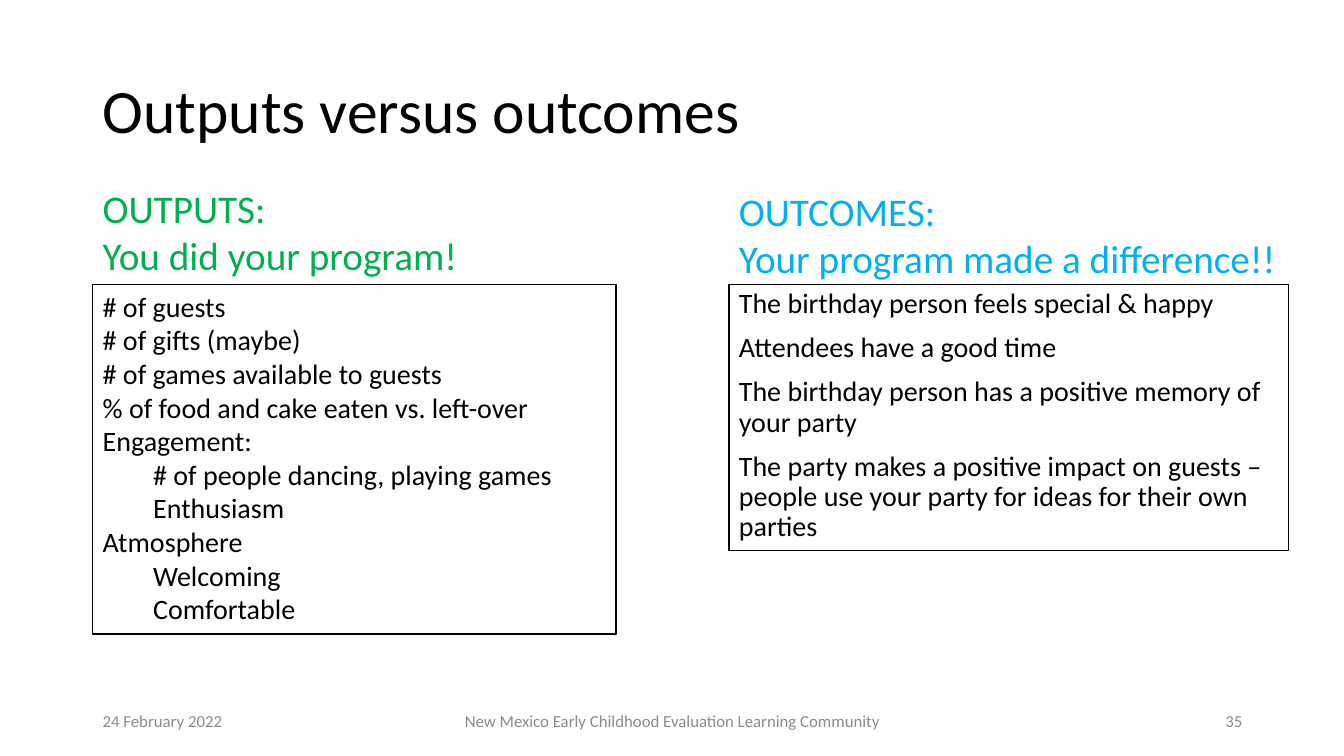
from pptx import Presentation
from pptx.dml.color import RGBColor
from pptx.enum.text import MSO_ANCHOR as Anchor, MSO_AUTO_SIZE as AutoSize, PP_ALIGN as Align
from pptx.util import Inches, Pt

BLACK = RGBColor(0x00, 0x00, 0x00)
WHITE = RGBColor(0xFF, 0xFF, 0xFF)
GREY = RGBColor(0x8C, 0x8C, 0x8C)
GREEN = RGBColor(0x00, 0xB0, 0x50)
BLUE = RGBColor(0x00, 0xB0, 0xF0)

LEFT, RIGHT = 0.92, 7.23
LEFT_WIDTH, RIGHT_WIDTH = 5.19, 5.55
LIST_TOP = 2.82
FOOTER_TOP, FOOTER_HEIGHT = 6.95, 0.4

# Each output is its text and its indent level.
OUTPUTS = [
    ("# of guests", 0),
    ("# of gifts (maybe)", 0),
    ("# of games available to guests", 0),
    ("% of food and cake eaten vs. left-over", 0),
    ("Engagement:", 0),
    ("# of people dancing, playing games", 1),
    ("Enthusiasm", 1),
    ("Atmosphere", 0),
    ("Welcoming", 1),
    ("Comfortable", 1),
]
OUTCOMES = [
    ("The birthday person feels special & happy", 0),
    ("Attendees have a good time", 0),
    ("The birthday person has a positive memory of your party", 0),
    ("The party makes a positive impact on guests – people use your party "
     "for ideas for their own parties", 0),
]


class SlideBuilder:
    font_name = "Calibri"

    def __init__(self, deck):
        self.page = deck.slides.add_slide(deck.slide_layouts[5])

    def style(self, para, size, color, align=Align.LEFT):
        para.alignment = align
        para.font.name = self.font_name
        para.font.size = Pt(size)
        para.font.color.rgb = color

    def title(self, text, left, top, width, height):
        box = self.page.shapes.title
        box.left, box.top = Inches(left), Inches(top)
        box.width, box.height = Inches(width), Inches(height)
        frame = box.text_frame
        frame.text = text
        frame.vertical_anchor = Anchor.MIDDLE
        para = frame.paragraphs[0]
        para.line_spacing = 0.9
        self.style(para, 44, BLACK)

    def text(self, lines, left, top, width, height, size, color,
             align=Align.LEFT, anchor=Anchor.TOP):
        box = self.page.shapes.add_textbox(
            Inches(left), Inches(top), Inches(width), Inches(height))
        frame = box.text_frame
        frame.word_wrap = True
        frame.auto_size = AutoSize.NONE
        frame.vertical_anchor = anchor
        frame.text = "\n".join(lines)
        for para in frame.paragraphs:
            self.style(para, size, color, align)
        return box

    def heading(self, lines, left, top, width, color):
        self.text(lines, left, top, width, 1.04, 28, color)

    def framed_list(self, items, left, width, height, line_spacing=1.0, gap=0):
        box = self.text([text for text, level in items],
                        left, LIST_TOP, width, height, 20, BLACK)
        box.fill.solid()
        box.fill.fore_color.rgb = WHITE
        box.line.color.rgb = BLACK
        box.line.width = Pt(1)
        for index, (para, (text, level)) in enumerate(zip(box.text_frame.paragraphs, items)):
            para.level = level
            para.line_spacing = line_spacing
            para.space_before = Pt(gap if index else 0)
            if level:
                para._p.get_or_add_pPr().set("marL", str(Inches(0.5)))

    def footer(self, text, left, width, align):
        self.text([text], left, FOOTER_TOP, width, FOOTER_HEIGHT, 12, GREY,
                  align, Anchor.MIDDLE)


def main():
    deck = Presentation()
    deck.slide_width, deck.slide_height = Inches(13.33), Inches(7.5)
    slide = SlideBuilder(deck)

    slide.title("Outputs versus outcomes", LEFT, 0.4, 11.5, 1.45)
    slide.framed_list(OUTPUTS, LEFT, LEFT_WIDTH, 3.47)
    slide.framed_list(OUTCOMES, RIGHT, RIGHT_WIDTH, 2.64, line_spacing=0.9, gap=10)
    slide.heading(["OUTCOMES:", "Your program made a difference!!"],
                  RIGHT, 1.81, RIGHT_WIDTH, BLUE)
    slide.heading(["OUTPUTS:", "You did your program!"], LEFT, 1.78, LEFT_WIDTH, GREEN)

    slide.footer("24 February 2022", LEFT, 3, Align.LEFT)
    slide.footer("New Mexico Early Childhood Evaluation Learning Community",
                 4.42, 4.5, Align.CENTER)
    slide.footer("35", 9.42, 3, Align.RIGHT)

    deck.save("out.pptx")


if __name__ == "__main__":
    main()
